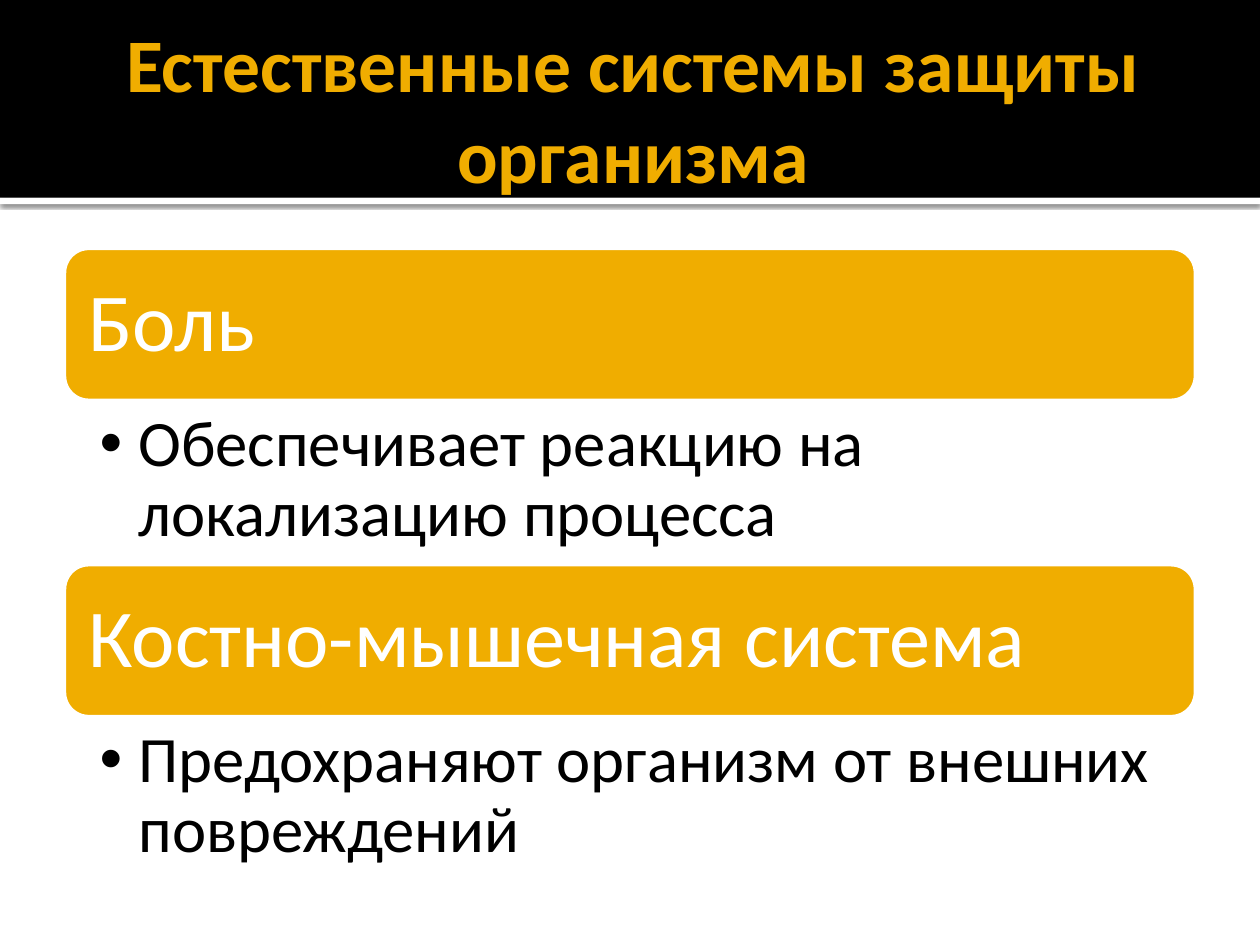
from lxml.etree import SubElement
from pptx import Presentation
from pptx.dml.color import RGBColor
from pptx.enum.shapes import MSO_SHAPE
from pptx.enum.text import MSO_ANCHOR, MSO_AUTO_SIZE, PP_ALIGN
from pptx.oxml.ns import qn
from pptx.util import Emu, Pt

PX = 9144  # EMU per px, 100 px to the inch
GOLD, WHITE, BLACK = "F0AD00", "FFFFFF", "000000"

SECTIONS = [
    ("Боль", "Обеспечивает реакцию на локализацию процесса"),
    ("Костно-мышечная система", "Предохраняют организм от внешних повреждений"),
]


def px(n):
    return Emu(n * PX)


def rgb(value):
    return RGBColor.from_string(value)


def write(sp, text, size, color, bold=False, align=PP_ALIGN.LEFT,
          anchor=MSO_ANCHOR.MIDDLE, insets=(0, 0, 0, 0), spacing=None):
    """Fill a shape with one formatted paragraph and return it."""
    tf = sp.text_frame
    tf.word_wrap = True
    tf.auto_size = MSO_AUTO_SIZE.NONE
    tf.vertical_anchor = anchor
    tf.margin_left, tf.margin_top, tf.margin_right, tf.margin_bottom = map(px, insets)
    p = tf.paragraphs[0]
    p.alignment = align
    p.line_spacing = spacing
    r = p.add_run()
    r.text = text
    r.font.name, r.font.size, r.font.bold = "Calibri", Pt(size), bold
    r.font.color.rgb = rgb(color)
    return p


def add_box(s, kind, box, fill, line=None):
    sp = s.shapes.add_shape(kind, *map(px, box))
    sp.shadow.inherit = False
    sp.fill.solid()
    sp.fill.fore_color.rgb = rgb(fill)
    if line:
        sp.line.color.rgb = rgb(line)
        sp.line.width = Pt(3.78)
    else:
        sp.line.fill.background()
    return sp


def add_shadow(sp):
    effects = sp._element.spPr.find(qn("a:effectLst"))
    shadow = SubElement(effects, qn("a:outerShdw"), blurRad=str(Pt(2.5)),
                        dist=str(Pt(0.8)), dir="5400000", algn="t", rotWithShape="0")
    color = SubElement(shadow, qn("a:srgbClr"), val=BLACK)
    SubElement(color, qn("a:alpha"), val="60000")


def add_bullet(p, indent):
    pPr = p._p.get_or_add_pPr()
    pPr.set("marL", str(px(indent)))
    pPr.set("indent", str(px(-indent)))
    SubElement(pPr, qn("a:buFont"), typeface="Arial")
    SubElement(pPr, qn("a:buChar"), char="•")


def add_header(s, x, y, w, h, text):
    # White rule with a shadow, then the black band
    add_shadow(add_box(s, MSO_SHAPE.RECTANGLE, (x, y + h, w, 5), WHITE))
    add_box(s, MSO_SHAPE.RECTANGLE, (x, y, w, h), BLACK)

    # Title, raised above the band
    title = s.shapes.title
    title.left, title.top, title.width, title.height = map(
        px, (x + 50, y + 17, w - 100, h - 20))
    write(title, text, 43.2, GOLD, bold=True, align=PP_ALIGN.CENTER,
          insets=(10, 5, 5, 5))
    s.shapes._spTree.append(title._element)


def add_section(s, x, y, w, head_h, body_h, heading, body):
    # Heading bar
    bar = add_box(s, MSO_SHAPE.ROUNDED_RECTANGLE, (x, y, w, head_h), GOLD, WHITE)
    # The rounded shape insets its text by 6 px of its own
    write(bar, heading, 47, WHITE, insets=(14, 14, 14, 14), spacing=0.9)

    # Bulleted explanation
    tb = s.shapes.add_textbox(*map(px, (x, y + head_h, w, body_h)))
    p = write(tb, body, 37, BLACK, anchor=MSO_ANCHOR.TOP,
              insets=(29, 7, 37, 7), spacing=0.9)
    add_bullet(p, 31)


def main():
    prs = Presentation()
    prs.slide_width, prs.slide_height = px(1000), px(750)
    s = prs.slides.add_slide(prs.slide_layouts[5])

    add_header(s, 0, 0, 1000, 157, "Естественные системы защиты организма")
    head_h, body_h = 123, 128
    for i, (heading, body) in enumerate(SECTIONS):
        add_section(s, 50, 196 + i * (head_h + body_h), 900, head_h, body_h,
                    heading, body)

    prs.save("out.pptx")


if __name__ == "__main__":
    main()
